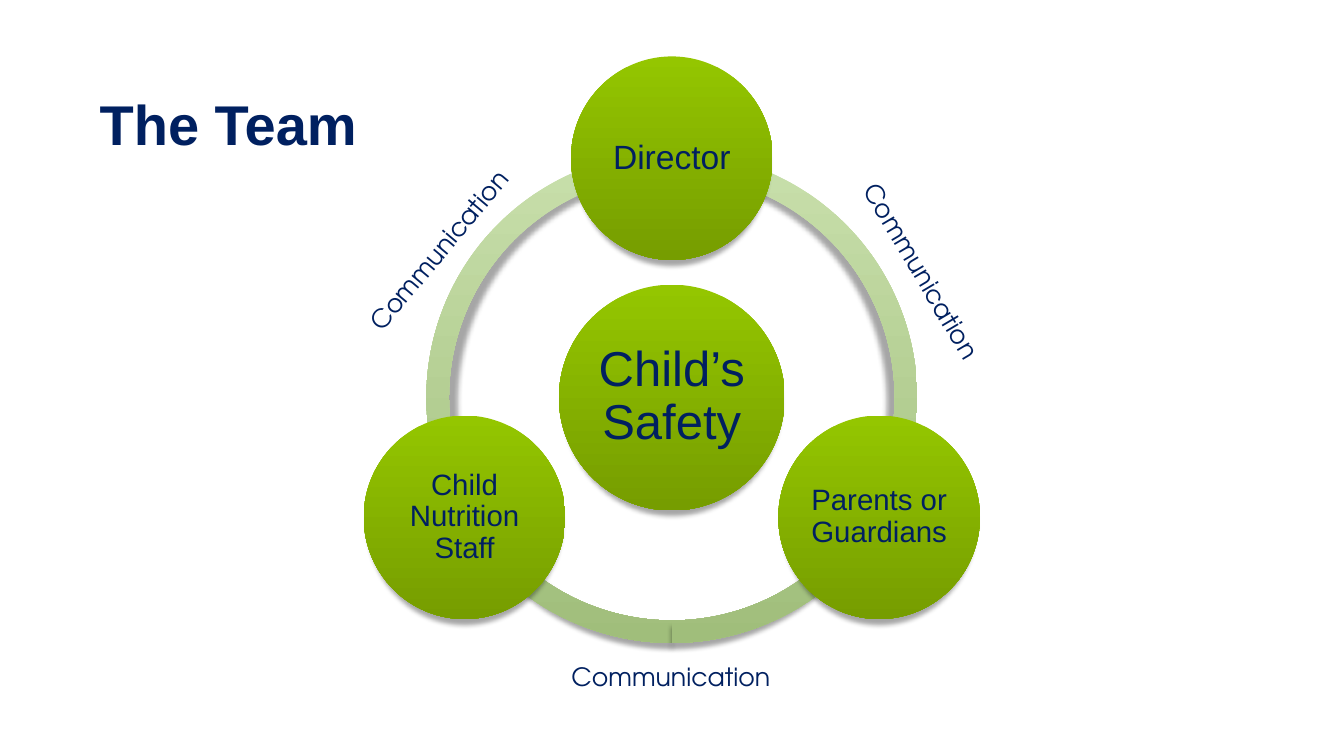
import math
from dataclasses import dataclass

from lxml import etree
from pptx import Presentation
from pptx.dml.color import RGBColor
from pptx.enum import shapes, text
from pptx.oxml import ns
from pptx.util import Pt


@dataclass(frozen=True)
class Theme:
    ink: str = "002060"
    circle: tuple = ("94C600", "769D00")
    ring: tuple = ("C8DFAB", "A0BE7B")
    shadow: str = "000000"
    font: str = "Arial"
    label_font: str = "TeX Gyre Adventor"
    title_size: float = 40
    hub_size: float = 35
    lead_size: float = 24
    node_size: float = 21
    label_size: float = 18


THEME = Theme()


def add_run(p, words, size, font=THEME.font, bold=False):
    r = p.add_run()
    r.text = words
    r.font.size = Pt(size)
    r.font.name = font
    r.font.bold = bold
    r.font.color.rgb = RGBColor.from_string(THEME.ink)


def add_shadow(s):
    """Drop a soft shadow straight down, a little narrower than the shape."""
    s.shadow.inherit = False
    effects = s._element.spPr.find(ns.qn("a:effectLst"))
    outer = etree.SubElement(effects, ns.qn("a:outerShdw"), blurRad=str(Pt(3.5)),
                             dist=str(Pt(4)), dir="5400000", sx="96000", rotWithShape="0")
    color = etree.SubElement(outer, ns.qn("a:srgbClr"), val=THEME.shadow)
    etree.SubElement(color, ns.qn("a:alpha"), val="34000")


def add_glossy(slide, kind, cx, cy, width, height, colors):
    """Add a shape centred on (cx, cy) with a top-to-bottom gradient and a shadow."""
    s = slide.shapes.add_shape(kind, Pt(cx - width / 2), Pt(cy - height / 2),
                               Pt(width), Pt(height))
    s.fill.gradient()
    s.fill.gradient_angle = 270
    for stop, color in zip(s.fill.gradient_stops, colors):
        stop.color.rgb = RGBColor.from_string(color)
    s.line.fill.background()
    add_shadow(s)
    return s


def add_circle(slide, cx, cy, width, height, words, size, inset):
    s = add_glossy(slide, shapes.MSO_SHAPE.OVAL, cx, cy, width, height, THEME.circle)
    tf = s.text_frame
    tf.word_wrap = True
    tf.vertical_anchor = text.MSO_ANCHOR.MIDDLE
    tf.margin_left = tf.margin_right = tf.margin_top = tf.margin_bottom = Pt(inset)
    p = tf.paragraphs[0]
    p.alignment = text.PP_ALIGN.CENTER
    p.line_spacing = 0.9
    add_run(p, words, size)


def add_label(slide, cx, cy, rotation):
    width, height = 158.4, 29
    s = slide.shapes.add_textbox(Pt(cx - width / 2), Pt(cy - height / 2),
                                 Pt(width), Pt(height))
    s.rotation = rotation
    tf = s.text_frame
    tf.word_wrap = False
    tf.auto_size = text.MSO_AUTO_SIZE.SHAPE_TO_FIT_TEXT
    add_run(tf.paragraphs[0], "Communication", THEME.label_size, THEME.label_font)


def add_title(slide, left, top, width, height):
    s = slide.shapes.title
    s.left, s.top, s.width, s.height = Pt(left), Pt(top), Pt(width), Pt(height)
    tf = s.text_frame
    tf.vertical_anchor = text.MSO_ANCHOR.MIDDLE
    p = tf.paragraphs[0]
    p.alignment = text.PP_ALIGN.LEFT
    add_run(p, "The Team", THEME.title_size, bold=True)


def add_team_cycle(slide, left, top, size):
    """Draw the ring in a square box, with its hub, three nodes and labels."""
    cx, cy = left + size / 2, top + size / 2
    for start, end in ((90, 162), (18, 90), (162, 18)):
        arc = add_glossy(slide, shapes.MSO_SHAPE.BLOCK_ARC, cx, cy, size, size, THEME.ring)
        # Adjustments count 100000 units; angles are stored as 60000 per degree.
        arc.adjustments[0] = start * 0.6
        arc.adjustments[1] = end * 0.6
        arc.adjustments[2] = 0.046

    add_circle(slide, cx, cy, 161.3, 161.3, "Child’s Safety", THEME.hub_size, 3.6)

    orbit = 171
    nodes = (("Director", THEME.lead_size),
             ("Parents or Guardians", THEME.node_size),
             ("Child Nutrition Staff", THEME.node_size))
    for i, (words, font_size) in enumerate(nodes):
        angle = math.radians(-90 + i * 120)
        add_circle(slide, cx + orbit * math.cos(angle), cy + orbit * math.sin(angle),
                   144, 145.4, words, font_size, 2.2)

    for dx, dy, rotation in ((179, -89.6, 59.3), (0.4, 199, 0), (-166, -106.2, 310)):
        add_label(slide, cx + dx, cy + dy, rotation)


def main():
    prs = Presentation()
    prs.slide_width, prs.slide_height = Pt(960), Pt(540)
    slide = prs.slides.add_slide(prs.slide_layouts[5])
    add_title(slide, 64, 43.2, 832.3, 90)
    add_team_cycle(slide, 304.6, 108.7, 350.6)
    prs.save("out.pptx")


if __name__ == "__main__":
    main()
